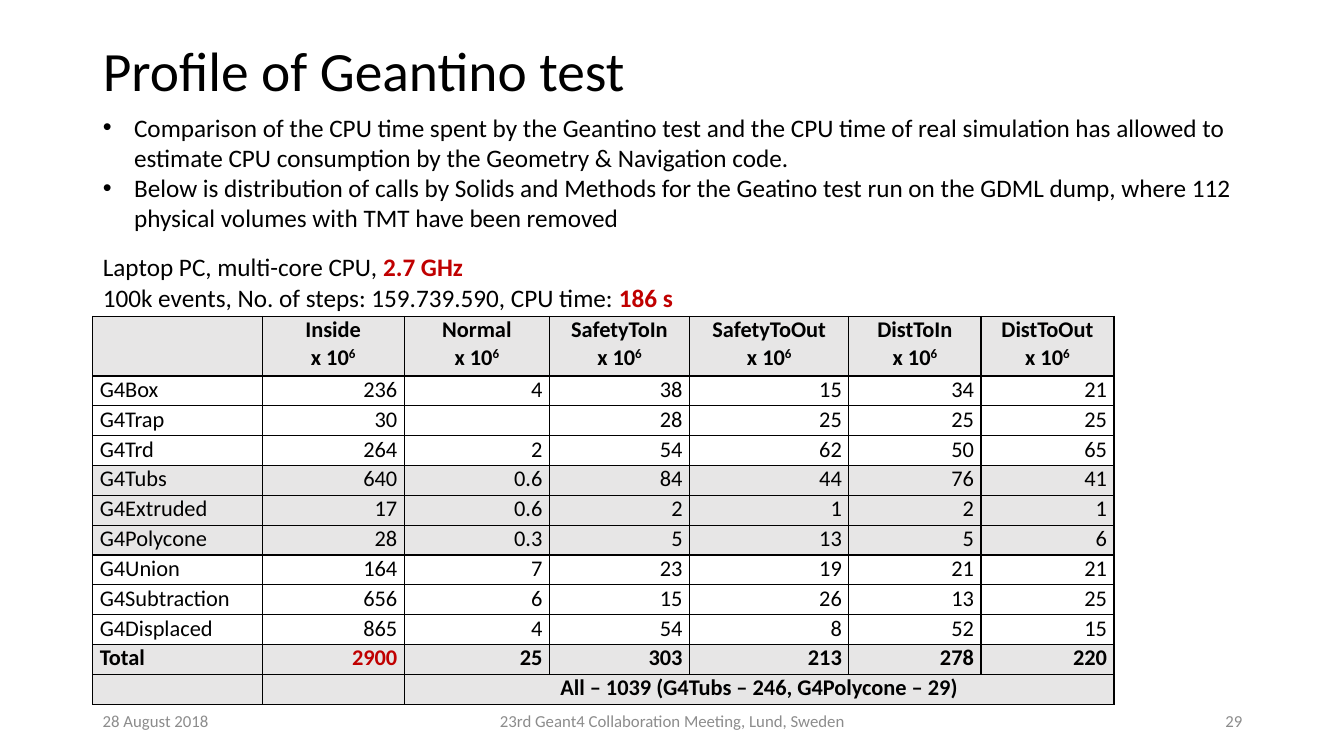
from lxml.etree import SubElement
from pptx import Presentation
from pptx.dml.color import RGBColor
from pptx.enum.text import MSO_ANCHOR, MSO_AUTO_SIZE, PP_ALIGN
from pptx.oxml.ns import qn
from pptx.util import Inches, Pt

FONT = "Calibri"
BLACK, RED, GRAY, SHADE = "000000", "C00000", "8C8C8C", "E7E6E6"
LEFT, WIDTH = 0.92, 11.5

TITLE = "Profile of Geantino test"
BULLETS = [
    "Comparison of the CPU time spent by the Geantino test and the CPU time of real "
    "simulation has allowed to estimate CPU consumption by the Geometry & Navigation code.",
    "Below is distribution of calls by Solids and Methods for the Geatino test run on "
    "the GDML dump, where 112 physical volumes with TMT have been removed",
]
# (label, highlighted value)
RUN_FACTS = [
    ("Laptop PC, multi-core CPU, ", "2.7 GHz"),
    ("100k events, No. of steps: 159.739.590, CPU time: ", "186 s"),
]
METHODS = ["Inside", "Normal", "SafetyToIn", "SafetyToOut", "DistToIn", "DistToOut"]
CALLS = [
    ("G4Box", "236", "4", "38", "15", "34", "21"),
    ("G4Trap", "30", "", "28", "25", "25", "25"),
    ("G4Trd", "264", "2", "54", "62", "50", "65"),
    ("G4Tubs", "640", "0.6", "84", "44", "76", "41"),
    ("G4Extruded", "17", "0.6", "2", "1", "2", "1"),
    ("G4Polycone", "28", "0.3", "5", "13", "5", "6"),
    ("G4Union", "164", "7", "23", "19", "21", "21"),
    ("G4Subtraction", "656", "6", "15", "26", "13", "25"),
    ("G4Displaced", "865", "4", "54", "8", "52", "15"),
    ("Total", "2900", "25", "303", "213", "278", "220"),
]
SUMMARY = "All – 1039 (G4Tubs – 246, G4Polycone – 29)"
SHADED_SOLIDS = {"G4Tubs", "G4Extruded", "G4Polycone", "Total"}
COLUMN_WIDTHS = [1.68, 1.41, 1.44, 1.39, 1.58, 1.31, 1.32]
TABLE_TOP, TABLE_HEIGHT, HEADER_HEIGHT = 3.14, 3.85, 0.59
# (text, left, width, alignment)
FOOTERS = [
    ("28 August 2018", LEFT, 3, PP_ALIGN.LEFT),
    ("23rd Geant4 Collaboration Meeting, Lund, Sweden", 4.42, 4.5, PP_ALIGN.CENTER),
    ("29", 9.42, 3, PP_ALIGN.RIGHT),
]


def color(value):
    return RGBColor.from_string(value)


def style(paragraph, size, ink=BLACK, bold=False, align=PP_ALIGN.LEFT):
    paragraph.alignment = align
    font = paragraph.font
    font.name, font.size, font.bold = FONT, Pt(size), bold
    font.color.rgb = color(ink)


def place(shape, left, top, width, height):
    shape.left, shape.top = Inches(left), Inches(top)
    shape.width, shape.height = Inches(width), Inches(height)


def set_bullet(paragraph, bullet):
    properties = paragraph._p.get_or_add_pPr()
    indent = Inches(0.31) if bullet else 0
    properties.set("marL", str(indent))
    properties.set("indent", str(-indent))
    if bullet:
        SubElement(properties, qn("a:buFont"), typeface="Arial")
        SubElement(properties, qn("a:buChar"), char="•")
    else:
        SubElement(properties, qn("a:buNone"))


def format_cell(cell, shaded):
    """Set the margins, black borders and fill of a table cell."""
    cell.margin_left = cell.margin_right = Inches(0.07)
    cell.margin_top = cell.margin_bottom = 0
    properties = cell._tc.get_or_add_tcPr()
    for side in ("a:lnL", "a:lnR", "a:lnT", "a:lnB"):
        line = SubElement(properties, qn(side), w=str(Pt(1)))
        SubElement(SubElement(line, qn("a:solidFill")), qn("a:srgbClr"), val=BLACK)
    if shaded:
        cell.fill.solid()
        cell.fill.fore_color.rgb = color(SHADE)
    else:
        cell.fill.background()


def fill_cell(cell, text, shaded, **look):
    format_cell(cell, shaded)
    paragraph = cell.text_frame.paragraphs[0]
    if text:
        paragraph.text = text
        style(paragraph, 16, **look)
    else:
        SubElement(paragraph._p, qn("a:endParaRPr"), sz="1600")
    return paragraph


def add_calls_table(slide):
    row_count = len(CALLS) + 2
    table = slide.shapes.add_table(
        row_count, len(COLUMN_WIDTHS), Inches(LEFT), Inches(TABLE_TOP),
        Inches(sum(COLUMN_WIDTHS)), Inches(TABLE_HEIGHT)).table
    table.first_row = table.horz_banding = False
    for column, width in zip(table.columns, COLUMN_WIDTHS):
        column.width = Inches(width)
    for row in table.rows:
        row.height = Inches((TABLE_HEIGHT - HEADER_HEIGHT) / (row_count - 1))
    table.rows[0].height = Inches(HEADER_HEIGHT)

    fill_cell(table.cell(0, 0), "", True)
    for c, method in enumerate(METHODS, 1):
        heading = fill_cell(table.cell(0, c), method, True,
                            bold=True, align=PP_ALIGN.CENTER)
        heading.add_line_break()
        heading.add_run().text = "x 10"
        exponent = heading.add_run()
        exponent.text = "6"
        exponent.font._element.set("baseline", "30000")

    for r, (solid, *counts) in enumerate(CALLS, 1):
        shaded, total = solid in SHADED_SOLIDS, solid == "Total"
        fill_cell(table.cell(r, 0), solid, shaded, bold=total)
        for c, count in enumerate(counts, 1):
            fill_cell(table.cell(r, c), count, shaded, bold=total,
                      ink=RED if total and c == 1 else BLACK, align=PP_ALIGN.RIGHT)

    last = row_count - 1
    for c in range(len(COLUMN_WIDTHS)):
        fill_cell(table.cell(last, c), SUMMARY if c == 2 else "", True,
                  bold=True, align=PP_ALIGN.CENTER)
    table.cell(last, 2).merge(table.cell(last, len(COLUMN_WIDTHS) - 1))


def add_body(body):
    place(body, LEFT, 1.06, WIDTH, 2.1)
    frame = body.text_frame
    frame.auto_size = MSO_AUTO_SIZE.NONE
    lines = [(text, None) for text in BULLETS] + RUN_FACTS
    for i, (text, highlight) in enumerate(lines):
        paragraph = frame.add_paragraph() if i else frame.paragraphs[0]
        set_bullet(paragraph, highlight is None)
        paragraph.space_before = Pt(13.4 if i == len(BULLETS) else 0)
        paragraph.add_run().text = text
        style(paragraph, 18)
        if highlight:
            value = paragraph.add_run()
            value.text = highlight
            value.font.bold = True
            value.font.color.rgb = color(RED)


def main():
    presentation = Presentation()
    presentation.slide_width, presentation.slide_height = Inches(13.33), Inches(7.5)
    slide = presentation.slides.add_slide(presentation.slide_layouts[1])

    title = slide.shapes.title
    place(title, LEFT, 0.4, WIDTH, 0.66)
    title.text_frame.text = TITLE
    title.text_frame.auto_size = MSO_AUTO_SIZE.NONE
    title.text_frame.vertical_anchor = MSO_ANCHOR.MIDDLE
    title.text_frame.paragraphs[0].line_spacing = 0.9
    style(title.text_frame.paragraphs[0], 39.6)

    add_calls_table(slide)
    add_body(slide.placeholders[1])

    for text, left, width, align in FOOTERS:
        frame = slide.shapes.add_textbox(
            Inches(left), Inches(6.95), Inches(width), Inches(0.4)).text_frame
        frame.word_wrap = True
        frame.vertical_anchor = MSO_ANCHOR.MIDDLE
        frame.text = text
        style(frame.paragraphs[0], 12, GRAY, align=align)

    presentation.save("out.pptx")


if __name__ == "__main__":
    main()
